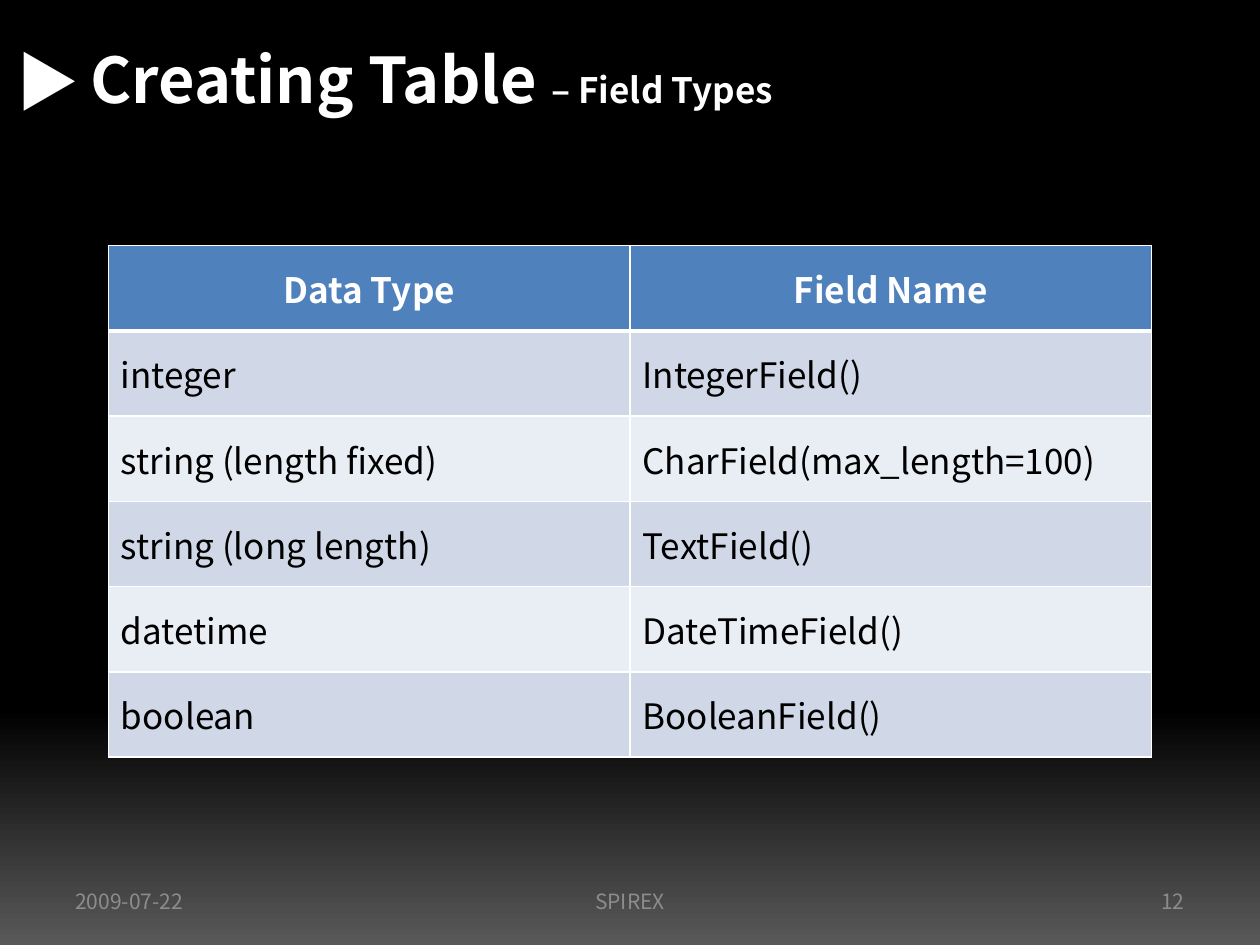
import pptx
import pptx.util
import pptx.dml.color
import pptx.enum.text
import pptx.oxml
import pptx.oxml.ns
from lxml import etree

Inches, Pt = pptx.util.Inches, pptx.util.Pt
RGBColor = pptx.dml.color.RGBColor
ALIGN = pptx.enum.text.PP_ALIGN
ANCHOR = pptx.enum.text.MSO_ANCHOR

BLACK = RGBColor(0x00, 0x00, 0x00)
WHITE = RGBColor(0xFF, 0xFF, 0xFF)
DARK_GREY = RGBColor(0x59, 0x59, 0x59)
FOOTER_GREY = RGBColor(0x8C, 0x8C, 0x8C)
HEADER_BLUE = RGBColor(0x4F, 0x81, 0xBD)
BANDS = [RGBColor(0xD0, 0xD8, 0xE8), RGBColor(0xE9, 0xED, 0xF4)]

FONT = "Noto Sans CJK KR"
WIDTH, HEIGHT = 10, 7.5
MARGIN = 0.05 * WIDTH

FIELD_TYPES = [
    ("Data Type", "Field Name"),
    ("integer", "IntegerField()"),
    ("string (length fixed)", "CharField(max_length=100)"),
    ("string (long length)", "TextField()"),
    ("datetime", "DateTimeField()"),
    ("boolean", "BooleanField()"),
]


def style_run(r, size, color, bold=False):
    r.font.size = Pt(size)
    r.font.bold = bold
    r.font.color.rgb = color
    r.font.name = FONT
    ea = etree.SubElement(r.font._element, pptx.oxml.ns.qn("a:ea"))
    ea.set("typeface", FONT)


def add_text(s, box, runs, color, align=ALIGN.LEFT, anchor=ANCHOR.MIDDLE, wrap=True):
    """Add one line of text; runs holds (text, size, bold) tuples."""
    tf = s.shapes.add_textbox(*map(Inches, box)).text_frame
    tf.word_wrap = wrap
    tf.vertical_anchor = anchor
    p = tf.paragraphs[0]
    p.alignment = align
    for text, size, bold in runs:
        r = p.add_run()
        r.text = text
        style_run(r, size, color, bold)


def set_background(s):
    fill = s.background.fill
    fill.gradient()
    fill.gradient_angle = 90
    for stop, color, position in zip(fill.gradient_stops, (DARK_GREY, BLACK), (0, 0.25)):
        stop.color.rgb = color
        stop.position = position


def set_borders(cell, widths):
    """Draw white borders; widths are points for left, right, top, bottom."""
    tc_pr = cell._tc.get_or_add_tcPr()
    for i, (side, width) in enumerate(zip("LRTB", widths)):
        tc_pr.insert(i, pptx.oxml.parse_xml(
            f'<a:ln{side} {pptx.oxml.ns.nsdecls("a")} w="{Pt(width)}">'
            f'<a:solidFill><a:srgbClr val="{WHITE}"/></a:solidFill></a:ln{side}>'))


def add_field_table(s, box, rows):
    tbl = s.shapes.add_table(len(rows), len(rows[0]), *map(Inches, box)).table
    for i, row in enumerate(rows):
        header = i == 0
        for j, text in enumerate(row):
            cell = tbl.cell(i, j)
            cell.text = text
            cell.vertical_anchor = ANCHOR.MIDDLE
            cell.fill.solid()
            cell.fill.fore_color.rgb = HEADER_BLUE if header else BANDS[(i - 1) % 2]
            set_borders(cell, (1, 1, 3 if i == 1 else 1, 3 if header else 1))
            p = cell.text_frame.paragraphs[0]
            p.alignment = ALIGN.CENTER if header else ALIGN.LEFT
            style_run(p.runs[0], 20, WHITE if header else BLACK, header)


def add_footer(s):
    top, height = 6.95, 0.4
    side, middle = 2.33, 3.17
    for text, left, width, align in (
        ("2009-07-22", MARGIN, side, ALIGN.LEFT),
        ("SPIREX", (WIDTH - middle) / 2, middle, ALIGN.CENTER),
        ("12", WIDTH - MARGIN - side, side, ALIGN.RIGHT),
    ):
        add_text(s, (left, top, width, height), [(text, 12, False)], FOOTER_GREY, align)


def main():
    prs = pptx.Presentation()
    prs.slide_width, prs.slide_height = Inches(WIDTH), Inches(HEIGHT)
    s = prs.slides.add_slide(prs.slide_layouts[6])
    set_background(s)
    add_text(s, (0.03, 0.29, 0.71, 0.71), [("▶", 36, False)], WHITE,
             anchor=ANCHOR.TOP, wrap=False)
    add_text(s, (0.62, 0, 0.9 * WIDTH, HEIGHT / 6),
             [("Creating Table ", 36, True), ("– Field Types", 20, True)], WHITE)
    table_width = 8.28
    add_field_table(s, ((WIDTH - table_width) / 2, 1.95, table_width, 4.06), FIELD_TYPES)
    add_footer(s)
    prs.save("out.pptx")


if __name__ == "__main__":
    main()
